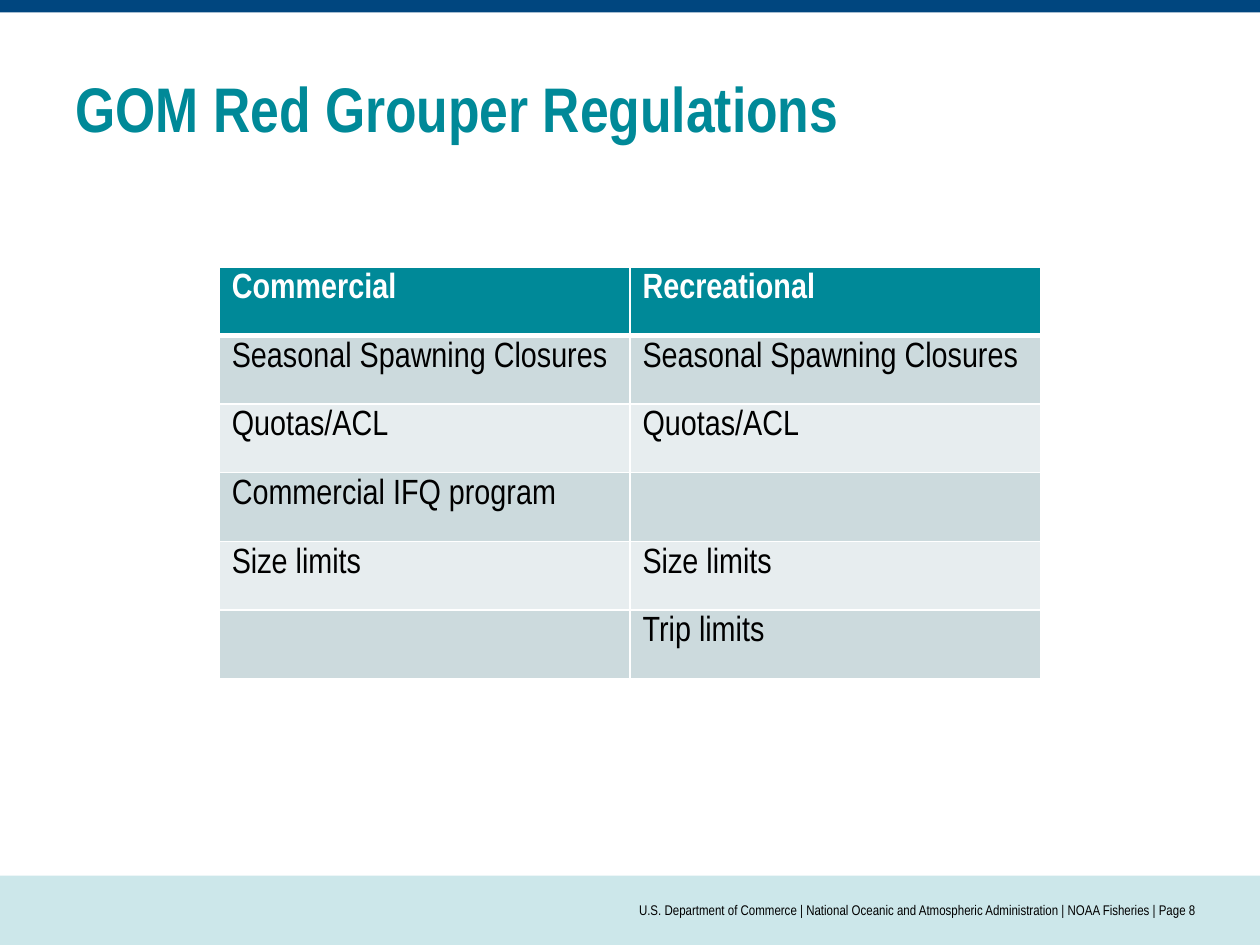
from lxml.etree import SubElement
from pptx import Presentation
from pptx.dml.color import RGBColor
from pptx.enum.shapes import MSO_SHAPE as Shape
from pptx.enum.text import MSO_ANCHOR as Anchor, PP_ALIGN as Align
from pptx.oxml.ns import qn
from pptx.util import Cm, Pt

WIDTH, HEIGHT = 25.4, 19.05
FONT = "Arial Narrow"
TEAL, WHITE, BLACK = "008998", "FFFFFF", "000000"
STRIPES = ["E7EDEF", "CCDADD"]
TITLE = "GOM Red Grouper Regulations"
FOOTER = [
    "U.S. Department of Commerce",
    "National Oceanic and Atmospheric Administration",
    "NOAA Fisheries",
    "Page 8",
]
BANDS = [
    (17.65, 1.4, "CCE7EA"),
    (0, 0.25, "00467F"),
]
REGULATIONS = [
    ("Commercial", "Recreational"),
    ("Seasonal Spawning Closures", "Seasonal Spawning Closures"),
    ("Quotas/ACL", "Quotas/ACL"),
    ("Commercial IFQ program", ""),
    ("Size limits", "Size limits"),
    ("", "Trip limits"),
]
TABLE_WIDTH, TABLE_HEIGHT, TABLE_TOP = 16.56, 8.3, 5.38


def color(value):
    return RGBColor.from_string(value)


def add_run(paragraph, text, size, tint, bold=False):
    run = paragraph.add_run()
    run.text = text
    run.font.name = FONT
    run.font.size = Pt(size)
    run.font.bold = bold
    run.font.color.rgb = color(tint)


def add_band(slide, top, height, tint):
    band = slide.shapes.add_shape(Shape.RECTANGLE, 0, Cm(top), Cm(WIDTH), Cm(height))
    band.shadow.inherit = False
    band.fill.solid()
    band.fill.fore_color.rgb = color(tint)
    band.line.fill.background()


def add_text_box(slide, left, top, width, height):
    box = slide.shapes.add_textbox(Cm(left), Cm(top), Cm(width), Cm(height))
    frame = box.text_frame
    frame.word_wrap = True
    frame.vertical_anchor = Anchor.MIDDLE
    return frame


def set_borders(cell, bottom, top):
    properties = cell._tc.get_or_add_tcPr()
    for side, points in (("L", 1), ("R", 1), ("T", top), ("B", bottom)):
        line = SubElement(properties, qn(f"a:ln{side}"), w=str(Pt(points)))
        fill = SubElement(line, qn("a:solidFill"))
        SubElement(fill, qn("a:srgbClr"), val=WHITE)


def add_regulations_table(slide):
    rows, columns = len(REGULATIONS), len(REGULATIONS[0])
    table = slide.shapes.add_table(
        rows, columns, Cm((WIDTH - TABLE_WIDTH) / 2), Cm(TABLE_TOP),
        Cm(TABLE_WIDTH), Cm(TABLE_HEIGHT),
    ).table
    for row, texts in enumerate(REGULATIONS):
        header = row == 0
        for column, text in enumerate(texts):
            cell = table.cell(row, column)
            set_borders(cell, bottom=3 if header else 1, top=3 if row == 1 else 1)
            cell.fill.solid()
            cell.fill.fore_color.rgb = color(TEAL if header else STRIPES[row % 2])
            if text:
                paragraph = cell.text_frame.paragraphs[0]
                add_run(paragraph, text, 20, WHITE if header else BLACK, header)


def main():
    presentation = Presentation()
    presentation.slide_width, presentation.slide_height = Cm(WIDTH), Cm(HEIGHT)
    slide = presentation.slides.add_slide(presentation.slide_layouts[6])

    for band in BANDS:
        add_band(slide, *band)

    title = add_text_box(slide, 1.27, 1.23, 22.86, 1.88)
    add_run(title.paragraphs[0], TITLE, 36, TEAL, True)

    footer = add_text_box(slide, 6.35, 17.65, 17.78, 1.4)
    footer.margin_left = footer.margin_right = 0
    footer.paragraphs[0].alignment = Align.RIGHT
    add_run(footer.paragraphs[0], " | ".join(FOOTER), 8, BLACK)

    add_regulations_table(slide)
    presentation.save("out.pptx")


if __name__ == "__main__":
    main()
